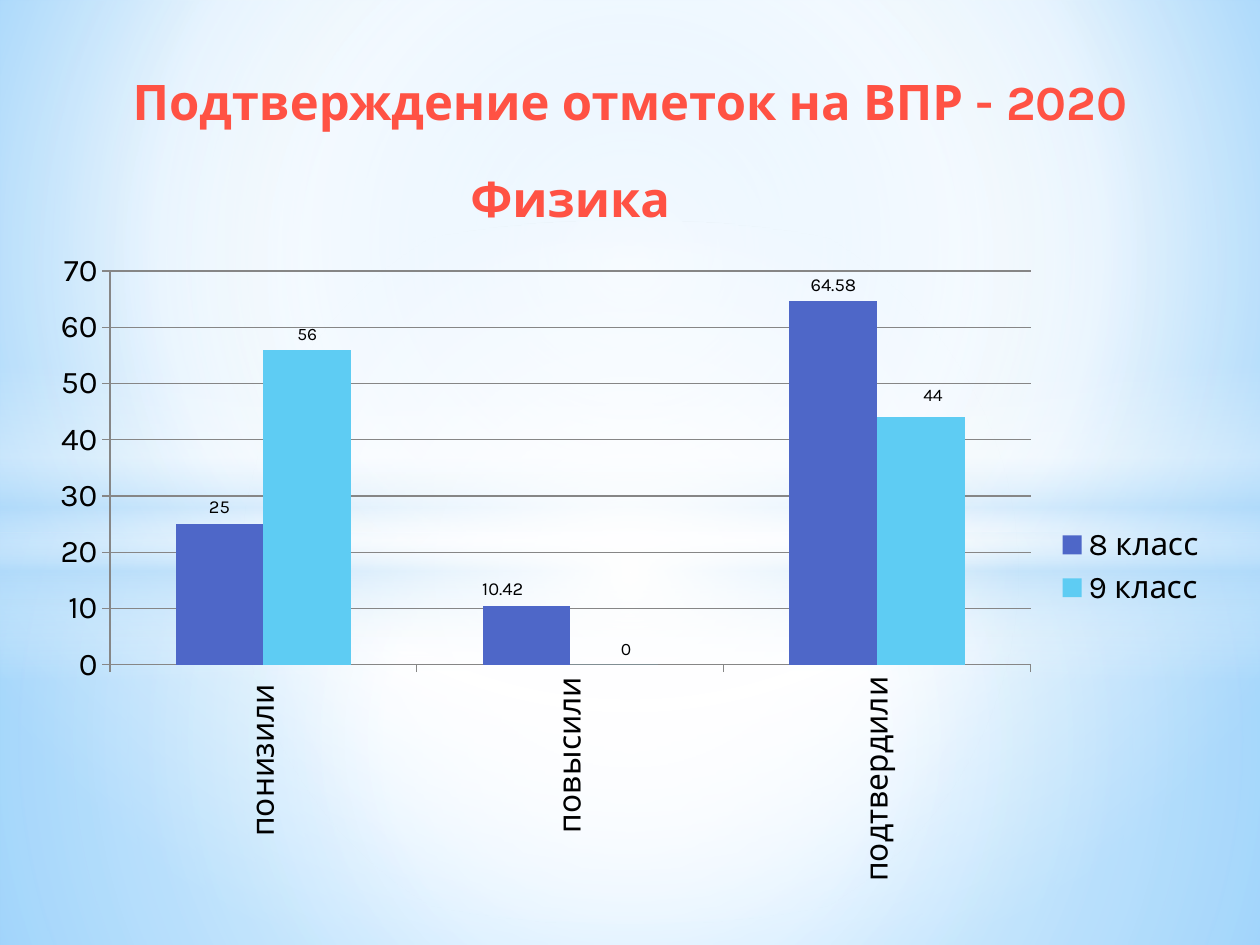
"""Build the slide comparing confirmed physics marks by class."""
from lxml import etree
from pptx import Presentation
from pptx.chart.data import CategoryChartData
from pptx.dml.color import RGBColor
from pptx.enum.chart import XL_CHART_TYPE, XL_LABEL_POSITION, XL_LEGEND_POSITION, XL_TICK_MARK
from pptx.enum.shapes import MSO_SHAPE
from pptx.enum.text import PP_ALIGN
from pptx.oxml.ns import qn
from pptx.util import Inches, Pt

RECTANGLE, OVAL = MSO_SHAPE.RECTANGLE, MSO_SHAPE.OVAL
COLUMNS = XL_CHART_TYPE.COLUMN_CLUSTERED
OUTSIDE_END = XL_LABEL_POSITION.OUTSIDE_END
LEGEND_RIGHT = XL_LEGEND_POSITION.RIGHT
TICK_OUT = XL_TICK_MARK.OUTSIDE
CENTER = PP_ALIGN.CENTER

FONT = "Karla"
COLORS = {"heading": "FF5244", "text": "000000", "axis": "868686",
          "white": "FFFFFF", "pale": "B4DCFA", "sky": "9ED5FF", "blue": "5BB9FF",
          "8 класс": "4E67C8", "9 класс": "5ECCF3"}

MIDDLE = (50, 50, 50, 50)
BACKGROUND = [(0, "sky", 100), (60, "white", 100), (100, "blue", 100)]
BACKGROUND_FOCUS = (20, 10, 20, 60)
GLOWS = [
    (RECTANGLE, (0, 4.23, 10, 3.27), MIDDLE,
     [(0, "white", 91), (37, "white", 76), (100, "pale", 79)]),
    (RECTANGLE, (0, 0, 10, 4.23), MIDDLE,
     [(0, "white", 89), (48, "white", 62), (100, "pale", 79)]),
    (RECTANGLE, (0, 2.9, 10, 2.5), None,
     [(0, "white", 0), (29, "white", 30), (45, "pale", 40),
      (55, "white", 26), (65, "pale", 60), (100, "white", 0)]),
    (OVAL, (0, 1.75, 10, 5.58), MIDDLE, [(0, "white", 100), (54, "white", 0)]),
]
HEADINGS = [
    ("Подтверждение отметок на ВПР - 2020", (0.67, 0.52, 8.66, 0.57)),
    ("Физика", (1.77, 1.29, 5.51, 0.57)),
]
CHART_AREA = (0.31, 1.89, 9.37, 5.21)
CATEGORIES = ["понизили ", "повысили", "подтвердили"]
SERIES = [
    ("8 класс", (25, 10.42, 64.58), 10.5, {1: (-0.02, 0)}),
    ("9 класс", (56, 0, 44), 10, {1: (0.01, 0), 2: (0.01, -0.01)}),
]
PLOT_LAYOUT = {"layoutTarget": "inner", "xMode": "edge", "yMode": "edge",
               "x": 0.06, "y": 0.05, "w": 0.78, "h": 0.6}
LEGEND_LAYOUT = {"xMode": "edge", "yMode": "edge", "x": 0.86, "y": 0.43, "w": 0.13, "h": 0.14}


def rgb(name):
    return RGBColor.from_string(COLORS[name])


def set_gradient(fill, owner, stops, focus):
    fill.gradient()
    gradient = next(owner.iter(qn("a:gradFill")))
    for child in list(gradient):
        gradient.remove(child)
    stop_list = etree.SubElement(gradient, qn("a:gsLst"))
    for position, name, opacity in stops:
        stop = etree.SubElement(stop_list, qn("a:gs"), pos=str(position * 1000))
        color = etree.SubElement(stop, qn("a:srgbClr"), val=COLORS[name])
        if opacity < 100:
            etree.SubElement(color, qn("a:alpha"), val=str(opacity * 1000))
    if focus:
        shade = etree.SubElement(gradient, qn("a:path"), path="circle")
        sides = {side: str(share * 1000) for side, share in zip("ltrb", focus)}
        etree.SubElement(shade, qn("a:fillToRect"), **sides)
    else:
        etree.SubElement(gradient, qn("a:lin"), ang="5400000", scaled="0")


def set_layout(owner, index, values):
    for old in owner.findall(qn("c:layout")):
        owner.remove(old)
    layout = etree.Element(qn("c:layout"))
    manual = etree.SubElement(layout, qn("c:manualLayout"))
    for tag, value in values.items():
        etree.SubElement(manual, qn("c:" + tag), val=str(value))
    owner.insert(index, layout)


def set_font(font, size, color="text"):
    font.name, font.size = FONT, Pt(size)
    font.color.rgb = rgb(color)


def add_glow(page, kind, area, focus, stops):
    glow = page.shapes.add_shape(kind, *map(Inches, area))
    glow.shadow.inherit = False
    glow.line.fill.background()
    set_gradient(glow.fill, glow.element, stops, focus)


def add_heading(page, text, area):
    box = page.shapes.add_textbox(*map(Inches, area))
    box.text_frame.word_wrap = True
    para = box.text_frame.paragraphs[0]
    para.alignment = CENTER
    span = para.add_run()
    span.text = text
    set_font(span.font, 28, "heading")
    span.font.bold = True


def style_series(series, label_size, shifts):
    series.format.fill.solid()
    series.format.fill.fore_color.rgb = rgb(series.name)
    series.invert_if_negative = False
    labels = series.data_labels
    labels.show_value = True
    labels.position = OUTSIDE_END
    set_font(labels.font, label_size)
    for index, (x, y) in shifts.items():
        label = series.points[index].data_label
        set_font(label.font, label_size)
        label.position = OUTSIDE_END
    for element in labels._element.findall(qn("c:dLbl")):
        x, y = shifts[int(element.find(qn("c:idx")).get("val"))]
        set_layout(element, 1, {"x": x, "y": y})


def add_marks_chart(page):
    data = CategoryChartData()
    data.categories = CATEGORIES
    for name, values, *_ in SERIES:
        data.add_series(name, values)
    chart = page.shapes.add_chart(COLUMNS, *map(Inches, CHART_AREA), data).chart
    chart.has_title = False
    set_font(chart.font, 18)
    chart.has_legend = True
    chart.legend.position = LEGEND_RIGHT
    chart.legend.include_in_layout = False
    set_layout(chart.legend._element, 1, LEGEND_LAYOUT)
    plot = chart.plots[0]
    plot.gap_width, plot.overlap = 150, 0
    plot.vary_by_categories = False
    set_layout(next(chart.element.iter(qn("c:plotArea"))), 0, PLOT_LAYOUT)
    for series, (_, _, label_size, shifts) in zip(plot.series, SERIES):
        style_series(series, label_size, shifts)

    values, names = chart.value_axis, chart.category_axis
    values.minimum_scale, values.maximum_scale, values.major_unit = 0, 70, 10
    values.has_major_gridlines = True
    for line in (values.format.line, names.format.line, values.major_gridlines.format.line):
        line.color.rgb = rgb("axis")
        line.width = Pt(0.75)
    for axis in (values, names):
        axis.major_tick_mark = TICK_OUT
        set_font(axis.tick_labels.font, 18)
    rotation = next(names.element.iter(qn("a:bodyPr")) if hasattr(names, "element")
                    else names._element.iter(qn("a:bodyPr")))
    rotation.set("rot", "-5400000")
    rotation.set("vert", "horz")


def main():
    deck = Presentation()
    deck.slide_width, deck.slide_height = Inches(10), Inches(7.5)
    page = deck.slides.add_slide(deck.slide_layouts[6])
    set_gradient(page.background.fill, page.element, BACKGROUND, BACKGROUND_FOCUS)
    for kind, area, focus, stops in GLOWS:
        add_glow(page, kind, area, focus, stops)
    for text, area in HEADINGS:
        add_heading(page, text, area)
    add_marks_chart(page)
    deck.save("out.pptx")


if __name__ == "__main__":
    main()
